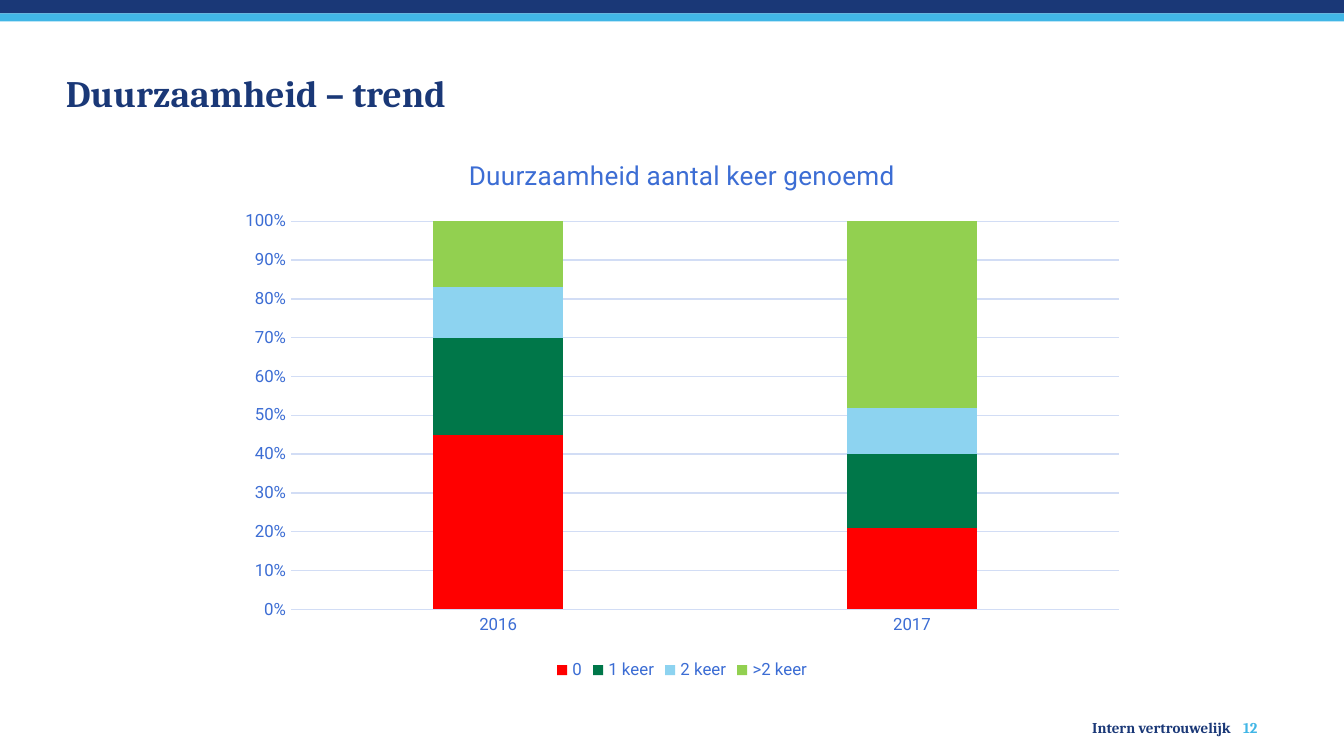
from pptx import Presentation
from pptx.chart.data import CategoryChartData
from pptx.dml.color import RGBColor
from pptx.enum.chart import XL_CHART_TYPE, XL_LEGEND_POSITION, XL_TICK_MARK
from pptx.enum.shapes import MSO_SHAPE
from pptx.enum.text import MSO_ANCHOR, PP_ALIGN
from pptx.util import Pt

NAVY, SKY, BLUE, PALE = "1A3877", "41B6E6", "3C6DD4", "D2DDF5"
YEARS = ["2016", "2017"]
SERIES = [
    ("0", (0.45, 0.21), "FF0000"),
    ("1 keer", (0.25, 0.19), "007749"),
    ("2 keer", (0.13, 0.12), "8DD3F0"),
    (">2 keer", (0.17, 0.48), "92D050"),
]


def rgb(value):
    """Return the colour for a hex string."""
    return RGBColor.from_string(value)


def set_font(font, name="Roboto", size=9, color=BLUE, bold=False):
    """Format a font."""
    font.name, font.size, font.bold = name, Pt(size), bold
    font.color.rgb = rgb(color)


def write(tf, text, align=PP_ALIGN.LEFT, anchor=MSO_ANCHOR.MIDDLE,
          margins=(0, 0, 0, 0), wrap=True, **font):
    """Write one formatted line into a text frame."""
    tf.word_wrap, tf.vertical_anchor = wrap, anchor
    tf.margin_left, tf.margin_top, tf.margin_right, tf.margin_bottom = map(Pt, margins)
    p = tf.paragraphs[0]
    p.alignment = align
    r = p.add_run()
    r.text = text
    set_font(r.font, **font)


def add_band(slide, box, color):
    """Add a plain coloured band."""
    sp = slide.shapes.add_shape(MSO_SHAPE.RECTANGLE, *map(Pt, box))
    sp.shadow.inherit = False
    sp.fill.solid()
    sp.fill.fore_color.rgb = rgb(color)
    sp.line.fill.background()


def add_header(slide, box):
    """Stack the two bands across the top."""
    x, y, w, h = box
    split = 7.2
    add_band(slide, (x, y, w, split), NAVY)
    add_band(slide, (x, y + split, w, h - split), SKY)


def add_title(slide, box, text):
    """Place and format the title placeholder."""
    sp = slide.shapes.title
    sp.left, sp.top, sp.width, sp.height = map(Pt, box)
    write(sp.text_frame, text, margins=(2.88, 0, 7.2, 0),
          name="Cambria", size=20, color=NAVY, bold=True)


def add_footer(slide, box, label, number):
    """Add the footer label with the page number at its right."""
    x, y, w, h = box
    number_w = 21.6
    label_w = w - number_w - 3.6
    sp = slide.shapes.add_textbox(Pt(x), Pt(y), Pt(label_w), Pt(h))
    write(sp.text_frame, label, align=PP_ALIGN.RIGHT, anchor=MSO_ANCHOR.TOP,
          margins=(2.88,) * 4, name="Cambria", size=8, color=NAVY, bold=True)
    sp = slide.shapes.add_textbox(Pt(x + w - number_w), Pt(y + 1.4), Pt(number_w), Pt(12.24))
    write(sp.text_frame, number, wrap=False,
          name="Cambria", size=8, color=SKY, bold=True)


def style_axis(axis):
    """Format the labels of an axis and hide its tick marks."""
    axis.major_tick_mark = axis.minor_tick_mark = XL_TICK_MARK.NONE
    set_font(axis.tick_labels.font)


def add_trend_chart(slide, box, title):
    """Add the stacked column chart with its title and legend."""
    data = CategoryChartData(number_format="0%")
    data.categories = YEARS
    for name, values, _ in SERIES:
        data.add_series(name, values)
    chart = slide.shapes.add_chart(
        XL_CHART_TYPE.COLUMN_STACKED, *map(Pt, box), data).chart
    set_font(chart.font, size=10, color=NAVY)

    chart.has_title = True
    write(chart.chart_title.text_frame, title, align=PP_ALIGN.CENTER, size=14)
    chart.chart_title.include_in_layout = False

    chart.has_legend = True
    chart.legend.position = XL_LEGEND_POSITION.BOTTOM
    chart.legend.include_in_layout = False
    set_font(chart.legend.font)

    style_axis(chart.category_axis)
    line = chart.category_axis.format.line
    line.color.rgb, line.width = rgb(PALE), Pt(0.75)

    axis = chart.value_axis
    style_axis(axis)
    axis.minimum_scale, axis.maximum_scale, axis.major_unit = 0, 1, 0.1
    axis.tick_labels.number_format = "0%"
    axis.tick_labels.number_format_is_linked = False
    axis.format.line.fill.background()
    axis.has_major_gridlines = True
    grid = axis.major_gridlines.format.line
    grid.color.rgb, grid.width = rgb(PALE), Pt(0.75)

    plot = chart.plots[0]
    plot.gap_width, plot.overlap, plot.vary_by_categories = 219, 100, False
    for series, (_, _, color) in zip(plot.series, SERIES):
        series.format.fill.solid()
        series.format.fill.fore_color.rgb = rgb(color)


def main():
    """Build and save the slide."""
    prs = Presentation()
    prs.slide_width, prs.slide_height = Pt(720), Pt(405)
    slide = prs.slides.add_slide(prs.slide_layouts[5])
    add_header(slide, (0, 0, 720, 11.5))
    add_title(slide, (32.4, 37.44, 656.64, 24.48), "Duurzaamheid – trend")
    add_trend_chart(slide, (121.68, 72, 487.44, 295.2),
                    "Duurzaamheid aantal keer genoemd")
    add_footer(slide, (413.28, 382.32, 274.32, 15.12), "Intern vertrouwelijk", "12")
    prs.save("out.pptx")


if __name__ == "__main__":
    main()
